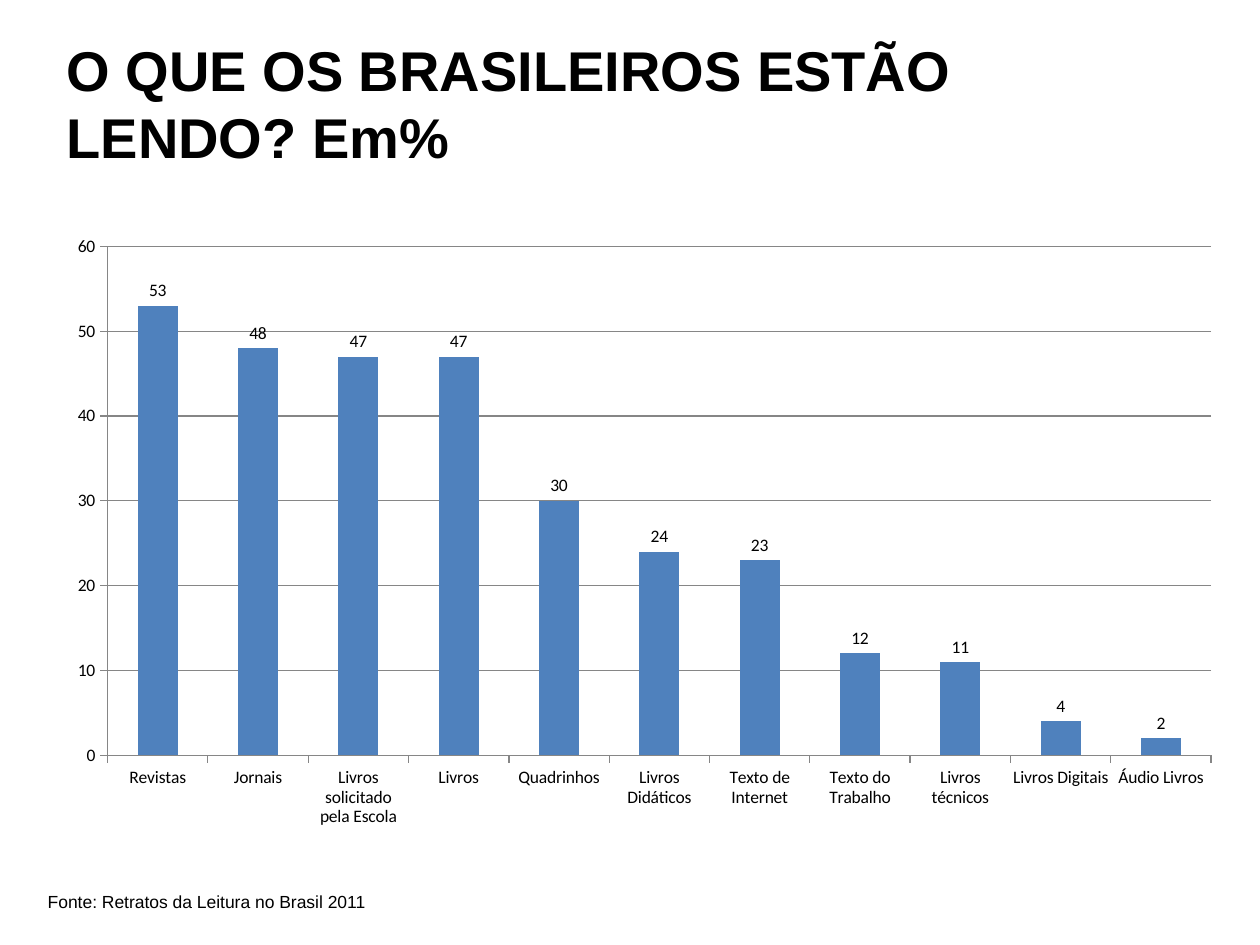
from pptx import Presentation
from pptx.chart.data import CategoryChartData
from pptx.dml.color import RGBColor
from pptx.enum.chart import XL_CHART_TYPE as ChartType, XL_LABEL_POSITION as LabelPosition
from pptx.enum.chart import XL_TICK_MARK as TickMark
from pptx.enum.text import MSO_AUTO_SIZE as AutoSize
from pptx.util import Inches, Pt

BLACK = RGBColor(0x00, 0x00, 0x00)
BLUE = RGBColor(0x4F, 0x81, 0xBD)
GRAY = RGBColor(0x86, 0x86, 0x86)

READERS = {
    "Revistas": 53,
    "Jornais": 48,
    "Livros solicitado pela Escola": 47,
    "Livros": 47,
    "Quadrinhos": 30,
    "Livros Didáticos": 24,
    "Texto de Internet": 23,
    "Texto do Trabalho": 12,
    "Livros técnicos": 11,
    "Livros Digitais": 4,
    "Áudio Livros": 2,
}


def style_font(font, name, size, bold=False):
    font.name = name
    font.size = Pt(size)
    font.bold = bold
    font.color.rgb = BLACK


def add_text(slide, text, left, top, width, height, size, bold=False, wrap=True):
    box = slide.shapes.add_textbox(
        Inches(left), Inches(top), Inches(width), Inches(height))
    frame = box.text_frame
    frame.word_wrap = wrap
    frame.auto_size = AutoSize.SHAPE_TO_FIT_TEXT
    run = frame.paragraphs[0].add_run()
    run.text = text
    style_font(run.font, "Arial", size, bold)


def style_line(line):
    line.color.rgb = GRAY
    line.width = Pt(0.75)


def add_readers_chart(slide):
    data = CategoryChartData()
    data.categories = list(READERS)
    data.add_series("Series 1", list(READERS.values()))
    chart = slide.shapes.add_chart(
        ChartType.COLUMN_CLUSTERED, Inches(0.43), Inches(1.78),
        Inches(9.37), Inches(4.88), data).chart
    chart.has_title = False
    chart.has_legend = False
    style_font(chart.font, "Calibri", 10)

    for axis in (chart.category_axis, chart.value_axis):
        axis.major_tick_mark = TickMark.OUTSIDE
        axis.minor_tick_mark = TickMark.NONE
        style_line(axis.format.line)
    values = chart.value_axis
    values.minimum_scale = 0
    values.maximum_scale = 60
    values.major_unit = 10
    values.has_major_gridlines = True
    style_line(values.major_gridlines.format.line)

    columns = chart.plots[0]
    columns.gap_width = 150
    columns.vary_by_categories = False
    fill = columns.series[0].format.fill
    fill.solid()
    fill.fore_color.rgb = BLUE
    columns.has_data_labels = True
    labels = columns.data_labels
    labels.show_value = True
    labels.position = LabelPosition.OUTSIDE_END
    style_font(labels.font, "Calibri", 10)


def main():
    deck = Presentation()
    deck.slide_width = Inches(10)
    deck.slide_height = Inches(7.5)
    slide = deck.slides.add_slide(deck.slide_layouts[6])
    add_text(slide, "O QUE OS BRASILEIROS ESTÃO LENDO? Em%",
             0.43, 0.23, 8.74, 1.18, size=32, bold=True)
    add_readers_chart(slide)
    add_text(slide, "Fonte: Retratos da Leitura no Brasil 2011",
             0.28, 7.02, 2.75, 0.27, size=10, wrap=False)
    deck.save("out.pptx")


if __name__ == "__main__":
    main()
